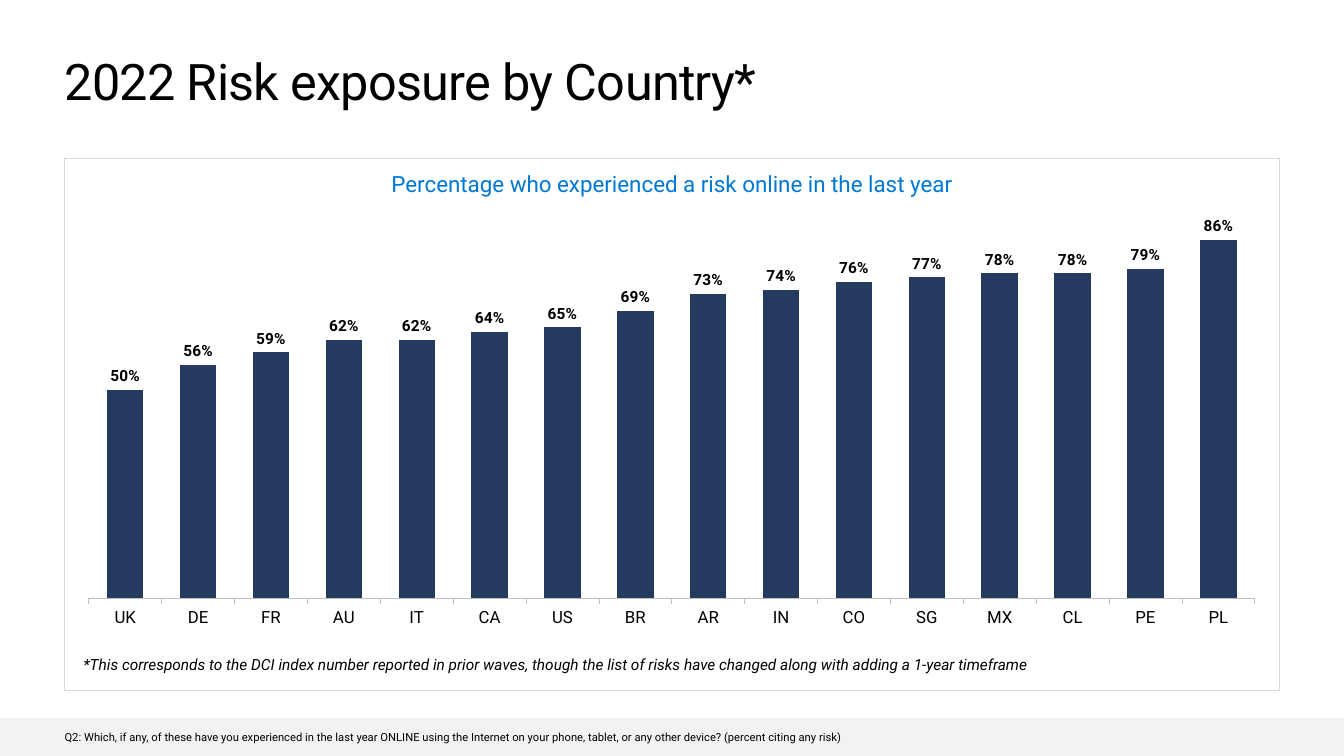
from lxml import etree
from pptx import Presentation
from pptx.chart.data import CategoryChartData
from pptx.dml.color import RGBColor
from pptx.enum.chart import XL_CHART_TYPE, XL_LABEL_POSITION, XL_TICK_MARK
from pptx.enum.shapes import MSO_SHAPE
from pptx.enum.text import MSO_ANCHOR, PP_ALIGN
from pptx.oxml.ns import qn
from pptx.util import Pt

COLUMN = XL_CHART_TYPE.COLUMN_CLUSTERED
OUTSIDE_END = XL_LABEL_POSITION.OUTSIDE_END
TICK_OUTSIDE, TICK_NONE = XL_TICK_MARK.OUTSIDE, XL_TICK_MARK.NONE
RECTANGLE = MSO_SHAPE.RECTANGLE
TOP, MIDDLE = MSO_ANCHOR.TOP, MSO_ANCHOR.MIDDLE
LEFT, CENTER = PP_ALIGN.LEFT, PP_ALIGN.CENTER

FONT = "Roboto"
COLORS = {
    "text": "000000",
    "heading": "0078D4",
    "bar": "243A5E",
    "axis": "BFBFBF",
    "frame": "D9D9D9",
    "footer": "F2F2F2",
}
SLIDE_WIDTH, SLIDE_HEIGHT = 960, 540
MARGIN, CONTENT_WIDTH = 46.08, 867.6

RISK_BY_COUNTRY = {
    "UK": 0.50, "DE": 0.56, "FR": 0.59, "AU": 0.62,
    "IT": 0.62, "CA": 0.64, "US": 0.65, "BR": 0.69,
    "AR": 0.73, "IN": 0.74, "CO": 0.76, "SG": 0.77,
    "MX": 0.78, "CL": 0.78, "PE": 0.79, "PL": 0.86,
}
# Plot area inside the chart, as fractions of its size
PLOT_LAYOUT = {"x": 0.02, "y": 0.02, "w": 0.96, "h": 0.89}


def color(name):
    return RGBColor.from_string(COLORS[name])


def style_font(font, size, color_name="text", bold=False, italic=False):
    font.name = FONT
    font.size = Pt(size)
    font.bold = bold
    font.italic = italic
    font.color.rgb = color(color_name)


def add_text(slide, box, text, size, color_name="text", italic=False,
             align=LEFT, anchor=TOP, spacing=None):
    shape = slide.shapes.add_textbox(*map(Pt, box))
    frame = shape.text_frame
    frame.word_wrap = True
    frame.vertical_anchor = anchor
    frame.margin_left = frame.margin_right = 0
    frame.margin_top = frame.margin_bottom = 0
    paragraph = frame.paragraphs[0]
    paragraph.alignment = align
    run = paragraph.add_run()
    run.text = text
    style_font(run.font, size, color_name, italic=italic)
    if spacing is not None:
        run._r.get_or_add_rPr().set("spc", str(round(spacing * 100)))


def add_rectangle(slide, box, fill=None, line=None):
    shape = slide.shapes.add_shape(RECTANGLE, *map(Pt, box))
    shape.shadow.inherit = False
    if fill:
        shape.fill.solid()
        shape.fill.fore_color.rgb = color(fill)
    else:
        shape.fill.background()
    if line:
        shape.line.color.rgb = color(line)
        shape.line.width = Pt(0.75)
    else:
        shape.line.fill.background()


def set_plot_layout(chart):
    plot_area = chart.plots[0]._element.getparent()
    for old_layout in plot_area.findall(qn("c:layout")):
        plot_area.remove(old_layout)
    layout = etree.Element(qn("c:layout"))
    manual = etree.SubElement(layout, qn("c:manualLayout"))
    settings = {"layoutTarget": "inner", "xMode": "edge", "yMode": "edge"}
    for tag, value in {**settings, **PLOT_LAYOUT}.items():
        etree.SubElement(manual, qn(f"c:{tag}")).set("val", str(value))
    plot_area.insert(0, layout)


def add_risk_chart(slide, box):
    data = CategoryChartData(number_format="0%")
    data.categories = RISK_BY_COUNTRY.keys()
    data.add_series("Series 1", RISK_BY_COUNTRY.values())
    chart = slide.shapes.add_chart(COLUMN, *map(Pt, box), data).chart
    chart.has_title = False
    chart.has_legend = False
    style_font(chart.font, 10)
    set_plot_layout(chart)

    # Bars and their labels
    plot = chart.plots[0]
    plot.gap_width = 100
    plot.overlap = -27
    plot.vary_by_categories = False
    fill = plot.series[0].format.fill
    fill.solid()
    fill.fore_color.rgb = color("bar")
    labels = plot.series[0].data_labels
    labels.show_value = True
    labels.position = OUTSIDE_END
    labels.number_format = "0%"
    labels.number_format_is_linked = False
    style_font(labels.font, 11, bold=True)

    # Axes
    countries = chart.category_axis
    countries.major_tick_mark = TICK_OUTSIDE
    countries.minor_tick_mark = TICK_NONE
    countries.format.line.color.rgb = color("axis")
    countries.format.line.width = Pt(0.5)
    style_font(countries.tick_labels.font, 12)
    percentages = chart.value_axis
    percentages.minimum_scale = 0
    percentages.maximum_scale = 1
    percentages.has_major_gridlines = False
    percentages.visible = False


def main():
    presentation = Presentation()
    presentation.slide_width = Pt(SLIDE_WIDTH)
    presentation.slide_height = Pt(SLIDE_HEIGHT)
    slide = presentation.slides.add_slide(presentation.slide_layouts[6])

    # Title
    add_text(slide, (MARGIN, 36, CONTENT_WIDTH, 44),
             "2022 Risk exposure by Country*", 36, spacing=-0.5)

    # Framed chart with heading and footnote
    add_rectangle(slide, (MARGIN, 113, CONTENT_WIDTH, 380.5), line="frame")
    add_text(slide, (96, 119, 768, 24),
             "Percentage who experienced a risk online in the last year",
             16, "heading", align=CENTER, anchor=MIDDLE)
    add_risk_chart(slide, (MARGIN, 123, CONTENT_WIDTH, 334.5))
    add_text(slide, (59.5, 468, 768, 14),
             "*This corresponds to the DCI index number reported in prior "
             "waves, though the list of risks have changed along with adding "
             "a 1-year timeframe", 11, italic=True)

    # Footer band with the survey question
    add_rectangle(slide, (0, 513, SLIDE_WIDTH, 27), fill="footer")
    add_text(slide, (MARGIN, 521.5, CONTENT_WIDTH, 9.5),
             "Q2: Which, if any, of these have you experienced in the last "
             "year ONLINE using the Internet on your phone, tablet, or any "
             "other device? (percent citing any risk)", 8)

    presentation.save("out.pptx")


if __name__ == "__main__":
    main()
